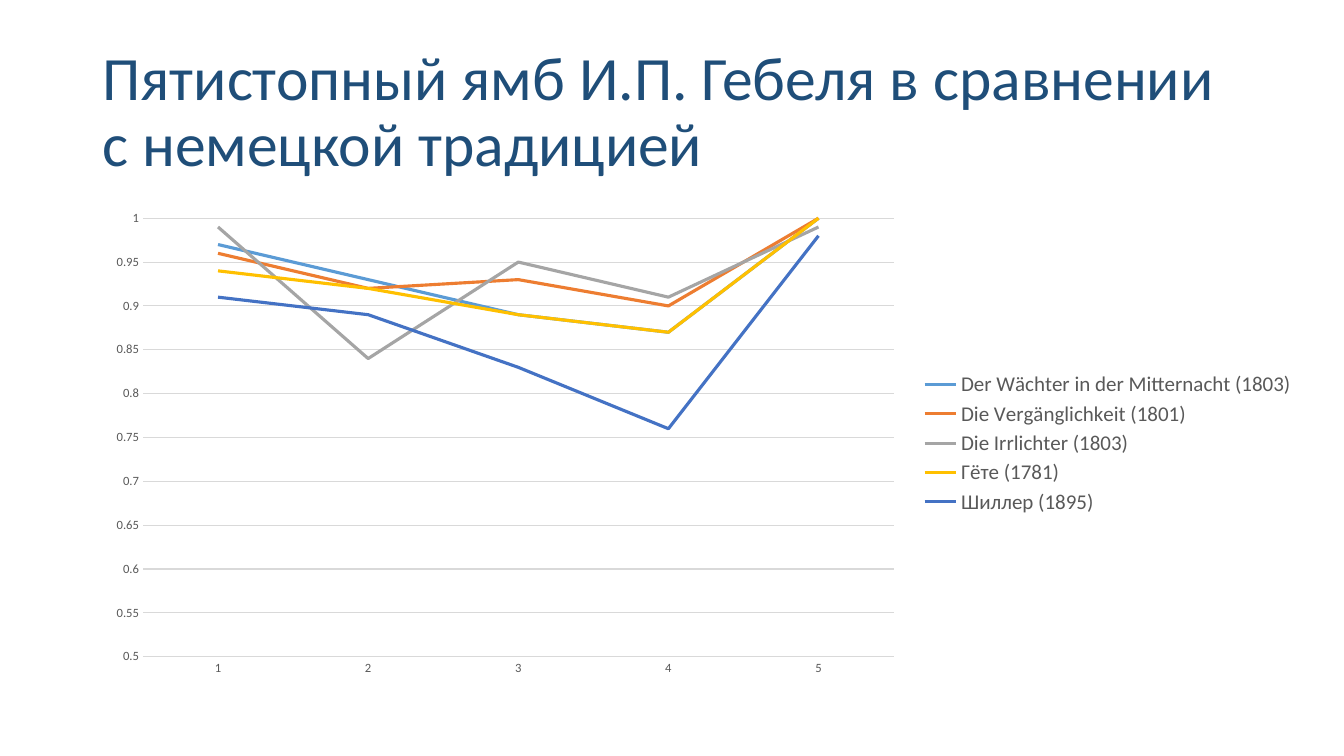
"""Build a slide with a line chart comparing iambic pentameter profiles."""
from pptx import Presentation
from pptx.chart.data import CategoryChartData
from pptx.dml.color import RGBColor
from pptx.enum.chart import XL_CHART_TYPE as ChartType, XL_LEGEND_POSITION as LegendPosition
from pptx.enum.chart import XL_MARKER_STYLE as MarkerStyle, XL_TICK_MARK as TickMark
from pptx.enum.text import MSO_ANCHOR as Anchor, MSO_AUTO_SIZE as AutoSize, PP_ALIGN as Align
from pptx.util import Pt


def color(value):
    return RGBColor.from_string(value)


def write_text(shape, text, size, fill, font="Calibri", align=Align.LEFT, spacing=0.9):
    frame = shape.text_frame
    frame.word_wrap = True
    frame.auto_size = AutoSize.NONE
    frame.vertical_anchor = Anchor.MIDDLE
    paragraph = frame.paragraphs[0]
    paragraph.alignment = align
    paragraph.line_spacing = spacing
    run = paragraph.add_run()
    run.text = text
    run.font.name = font
    run.font.size = Pt(size)
    run.font.color.rgb = color(fill)


GRAY_TEXT, GRAY_LINE = "595959", "D9D9D9"
POEMS = [
    ("Der Wächter in der Mitternacht (1803)", "5B9BD5", (0.97, 0.93, 0.89, 0.87, 1)),
    ("Die Vergänglichkeit (1801)", "ED7D31", (0.96, 0.92, 0.93, 0.9, 1)),
    ("Die Irrlichter (1803)", "A5A5A5", (0.99, 0.84, 0.95, 0.91, 0.99)),
    ("Гёте (1781)", "FFC000", (0.94, 0.92, 0.89, 0.87, 1)),
    ("Шиллер (1895)", "4472C4", (0.91, 0.89, 0.83, 0.76, 0.98)),
]

presentation = Presentation()
presentation.slide_width, presentation.slide_height = Pt(960), Pt(540)
slide = presentation.slides.add_slide(presentation.slide_layouts[5])

title = slide.shapes.title
title.left, title.top, title.width, title.height = Pt(66), Pt(28.75), Pt(828), Pt(104.4)
write_text(title, "Пятистопный ямб И.П. Гебеля в сравнении с немецкой традицией", size=44, fill="1F4E79")

chart_data = CategoryChartData()
chart_data.categories = ["1", "2", "3", "4", "5"]
for name, _, values in POEMS:
    chart_data.add_series(name, values)
chart = slide.shapes.add_chart(
    ChartType.LINE, Pt(66), Pt(143.75), Pt(867), Pt(345.6), chart_data
).chart
chart.has_title = False
chart.font.name = "Calibri"
chart.font.size = Pt(10)

for series, (_, stroke, _) in zip(chart.plots[0].series, POEMS):
    series.smooth = False
    series.marker.style = MarkerStyle.NONE
    series.format.line.width = Pt(2.25)
    series.format.line.color.rgb = color(stroke)

value_axis, category_axis = chart.value_axis, chart.category_axis
value_axis.minimum_scale, value_axis.maximum_scale = 0.5, 1
value_axis.major_unit = 0.05
value_axis.has_major_gridlines = True
value_axis.format.line.fill.background()
for line in (value_axis.major_gridlines.format.line, category_axis.format.line):
    line.width = Pt(0.75)
    line.color.rgb = color(GRAY_LINE)
for axis in (value_axis, category_axis):
    axis.major_tick_mark = axis.minor_tick_mark = TickMark.NONE

chart.has_legend = True
legend = chart.legend
legend.position = LegendPosition.RIGHT
legend.include_in_layout = False
for font, size in (
    (value_axis.tick_labels.font, 9),
    (category_axis.tick_labels.font, 9),
    (legend.font, 15),
):
    font.name = "Calibri"
    font.size = Pt(size)
    font.color.rgb = color(GRAY_TEXT)

presentation.save("out.pptx")
